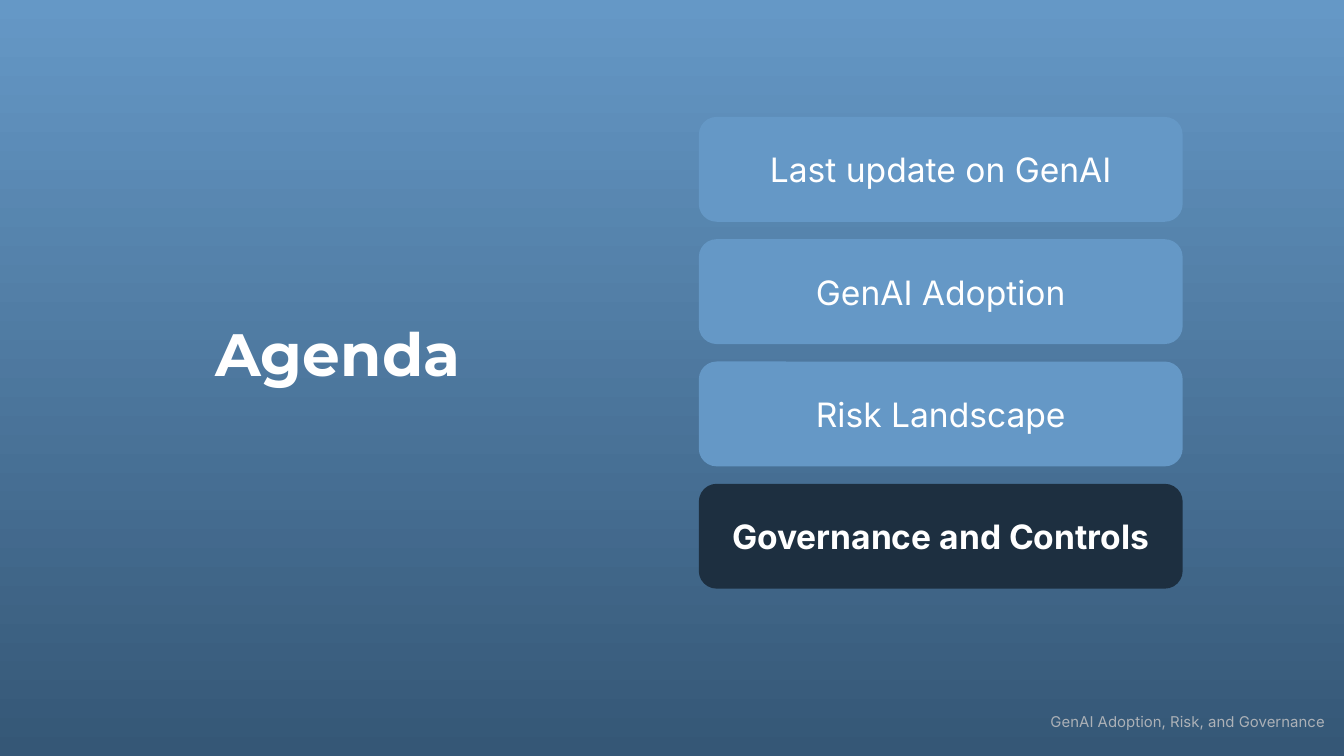
import pptx
import pptx.util
import pptx.dml.color
import pptx.enum.shapes
import pptx.enum.text

Inches = pptx.util.Inches
Align = pptx.enum.text.PP_ALIGN

HUES = {
    "sky": "6598C6",
    "deep": "355776",
    "navy": "1D2F40",
    "white": "FFFFFF",
    "gray": "ACB1B7",
}


def tint(name):
    return pptx.dml.color.RGBColor.from_string(HUES[name])


class Deck:
    """Holds the style and the current slide."""

    body = "Inter"
    head = "Montserrat"

    def __init__(self, wide):
        # Widescreen, 16 to 9
        self.show = pptx.Presentation()
        self.show.slide_width = Inches(wide)
        self.show.slide_height = Inches(wide * 9 / 16)
        self.slide = self.show.slides.add_slide(self.show.slide_layouts[6])

    def back(self, top, base):
        fill = self.slide.background.fill
        fill.gradient()
        fill.gradient_angle = 270
        for stop, hue, place in zip(fill.gradient_stops, (top, base), (0, 1)):
            stop.color.rgb = tint(hue)
            stop.position = place

    def text(self, words, spot, size, font=body, hue="white", bold=False,
             align=Align.CENTER, pad=0.1, home=None):
        shapes = (home or self.slide).shapes
        frame = shapes.add_textbox(*map(Inches, spot)).text_frame
        frame.word_wrap = True
        frame.margin_left = frame.margin_right = Inches(0.1)
        frame.margin_top = frame.margin_bottom = Inches(pad)
        line = frame.paragraphs[0]
        line.alignment = align
        run = line.add_run()
        run.text = words
        run.font.size = pptx.util.Pt(size)
        run.font.name = font
        run.font.bold = bold
        run.font.color.rgb = tint(hue)

    def card(self, words, left, top, wide, high, live):
        group = self.slide.shapes.add_group_shape()
        box = group.shapes.add_shape(
            pptx.enum.shapes.MSO_SHAPE.ROUNDED_RECTANGLE,
            *map(Inches, (left, top, wide, high)))
        box.adjustments[0] = 0.17
        box.shadow.inherit = False
        box.fill.solid()
        box.fill.fore_color.rgb = tint("navy" if live else "sky")
        box.line.fill.background()
        spot = (left + 0.11, top + 0.14, wide - 0.22, high - 0.28)
        self.text(words, spot, 18, bold=live, home=group)


def main():
    deck = Deck(10)
    deck.back("sky", "deep")

    # Title and footer
    deck.text("Agenda", (1.2, 2.26, 2.63, 0.74), 32, deck.head, bold=True)
    deck.text("GenAI Adoption, Risk, and Governance", (6.49, 5.25, 3.47, 0.24),
              8, hue="gray", align=Align.RIGHT, pad=0.05)

    # Agenda cards, with the current topic last
    topics = ["Last update on GenAI", "GenAI Adoption", "Risk Landscape",
              "Governance and Controls"]
    for row, topic in enumerate(topics):
        deck.card(topic, 5.2, 0.87 + 0.91 * row, 3.6, 0.78,
                  live=topic == topics[-1])

    deck.show.save("out.pptx")


if __name__ == "__main__":
    main()
